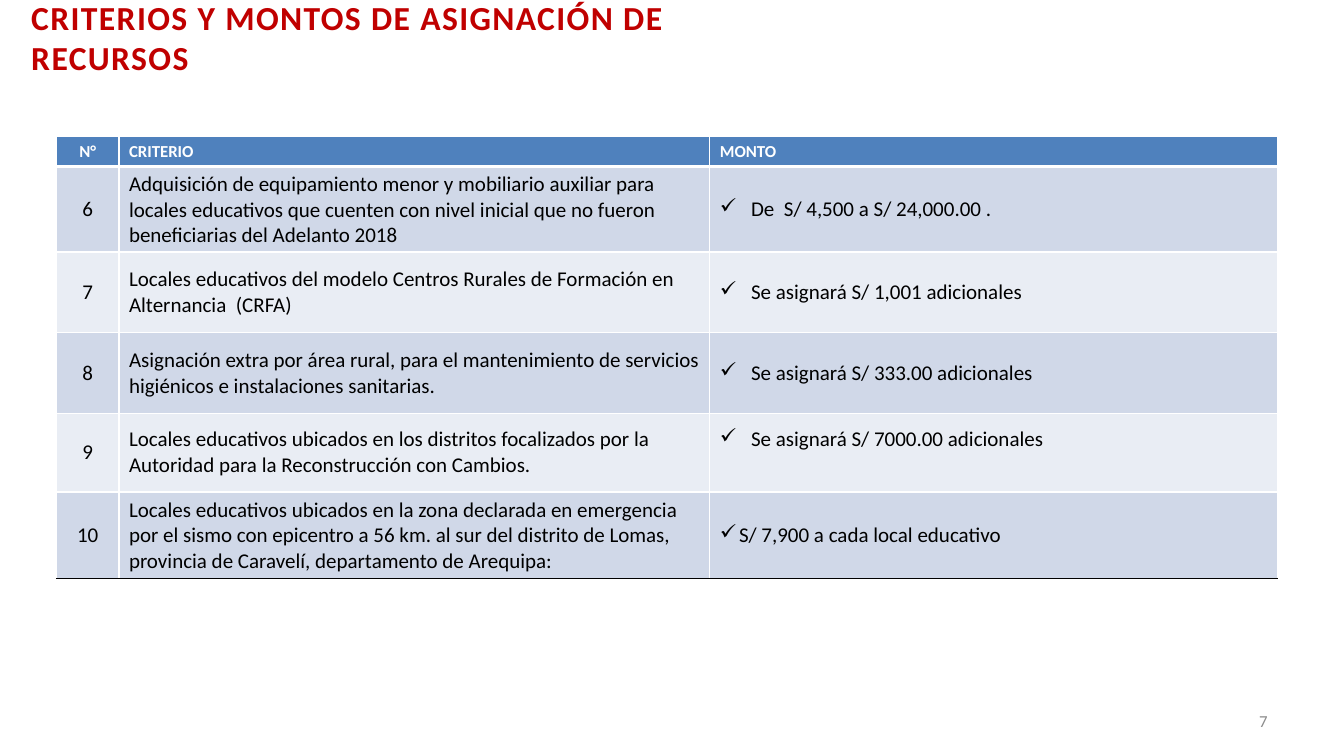
from dataclasses import dataclass

from lxml import etree
from pptx import Presentation
from pptx.dml.color import RGBColor
from pptx.enum.text import MSO_ANCHOR, MSO_AUTO_SIZE, PP_ALIGN
from pptx.oxml.ns import qn
from pptx.util import Pt

EMU_PER_PX = 9144
TITLE_ONLY = 5
LEFT, CENTER, RIGHT = PP_ALIGN.LEFT, PP_ALIGN.CENTER, PP_ALIGN.RIGHT
TOP, MIDDLE = MSO_ANCHOR.TOP, MSO_ANCHOR.MIDDLE
NO_FIT = MSO_AUTO_SIZE.NONE


@dataclass(frozen=True)
class Theme:
    """Colours, font and type sizes of the slide."""
    font: str = "Calibri"
    title: str = "C00000"
    header: str = "4F81BD"
    bands: tuple = ("D0D8E8", "E9EDF4")
    white: str = "FFFFFF"
    black: str = "000000"
    grey: str = "8C8C8C"
    title_size: int = 24
    body_size: int = 15
    small_size: int = 12


THEME = Theme()
COLUMN_WIDTHS = (62, 586, 563)
ROW_HEIGHTS = (28, 80, 80, 80, 78, 86)
HEADERS = ("N°", "CRITERIO", "MONTO")
FIRST_NUMBER = 6
CHECK_INDENT = 31
CRITERIA = (
    ("Adquisición de equipamiento menor y mobiliario auxiliar para locales "
     "educativos que cuenten con nivel inicial que no fueron beneficiarias "
     "del Adelanto 2018", "De  S/ 4,500 a S/ 24,000.00 ."),
    ("Locales educativos del modelo Centros Rurales de Formación en "
     "Alternancia  (CRFA)", "Se asignará S/ 1,001 adicionales"),
    ("Asignación extra por área rural, para el mantenimiento de servicios "
     "higiénicos e instalaciones sanitarias.", "Se asignará S/ 333.00 adicionales"),
    ("Locales educativos ubicados en los distritos focalizados por la "
     "Autoridad para la Reconstrucción con Cambios.",
     "Se asignará S/ 7000.00 adicionales"),
    ("Locales educativos ubicados en la zona declarada en emergencia por el "
     "sismo con epicentro a 56 km. al sur del distrito de Lomas, provincia de "
     "Caravelí, departamento de Arequipa:", "S/ 7,900 a cada local educativo"),
)


def px(length):
    """Turn pixels into EMU."""
    return length * EMU_PER_PX


def place(shape, left, top, width, height):
    """Move and size a shape."""
    shape.left, shape.top = px(left), px(top)
    shape.width, shape.height = px(width), px(height)


def write(frame, text, size, color, align=LEFT, bold=False):
    """Write one formatted paragraph and return it."""
    para = frame.paragraphs[0]
    para.text = text
    para.alignment = align
    font = para.font
    font.name, font.size, font.bold = THEME.font, Pt(size), bold
    font.color.rgb = RGBColor.from_string(color)
    return para


def add_check(para, indent):
    """Give a paragraph a check mark with a hanging indent."""
    properties = para._p.get_or_add_pPr()
    properties.set("marL", str(px(indent)))
    properties.set("indent", str(-px(indent)))
    etree.SubElement(properties, qn("a:buChar")).set("char", "✓")


def set_borders(cell, bottom_color, bottom_width):
    """Draw thin white cell borders with a chosen bottom line."""
    properties = cell._tc.get_or_add_tcPr()
    for side in ("L", "R", "T", "B"):
        color, width = (bottom_color, bottom_width) if side == "B" else (THEME.white, 1)
        line = etree.SubElement(properties, qn(f"a:ln{side}"), w=str(Pt(width)))
        fill = etree.SubElement(line, qn("a:solidFill"))
        etree.SubElement(fill, qn("a:srgbClr")).set("val", color)


def format_cell(cell, fill, anchor, bottom_color, bottom_width):
    """Set the borders, fill and anchor of a cell."""
    set_borders(cell, bottom_color, bottom_width)
    cell.fill.solid()
    cell.fill.fore_color.rgb = RGBColor.from_string(fill)
    cell.vertical_anchor = anchor


def add_title(slide, text):
    """Fill the title placeholder."""
    title = slide.shapes.title
    place(title, 21, 25, 767, 24)
    frame = title.text_frame
    frame.word_wrap, frame.auto_size = True, NO_FIT
    frame.vertical_anchor = MIDDLE
    para = write(frame, text, THEME.title_size, THEME.title, bold=True)
    para.runs[0]._r.get_or_add_rPr().set("spc", "100")


def add_page_number(slide, text):
    """Add the page number at the lower right."""
    box = slide.shapes.add_textbox(px(956), px(695), px(311), px(40))
    box.text_frame.word_wrap = True
    box.text_frame.vertical_anchor = MIDDLE
    write(box.text_frame, text, THEME.small_size, THEME.grey, RIGHT)


def add_criteria_table(slide):
    """Add the table of criteria and amounts."""
    table = slide.shapes.add_table(
        len(ROW_HEIGHTS), len(COLUMN_WIDTHS), px(56), px(135),
        px(sum(COLUMN_WIDTHS)), px(sum(ROW_HEIGHTS))).table
    for column, width in zip(table.columns, COLUMN_WIDTHS):
        column.width = px(width)
    for row, height in zip(table.rows, ROW_HEIGHTS):
        row.height = px(height)
    aligns = (CENTER, LEFT, LEFT)
    for cell, text, align in zip(table.rows[0].cells, HEADERS, aligns):
        format_cell(cell, THEME.header, TOP, THEME.white, 3)
        write(cell.text_frame, text, THEME.small_size, THEME.white, align, True)
    for index, (criterion, amount) in enumerate(CRITERIA):
        is_last = index == len(CRITERIA) - 1
        bottom_color = THEME.black if is_last else THEME.white
        cells = table.rows[index + 1].cells
        add_check(cells[2].text_frame.paragraphs[0], 19 if is_last else CHECK_INDENT)
        texts = (str(FIRST_NUMBER + index), criterion, amount)
        for cell, text, align in zip(cells, texts, aligns):
            format_cell(cell, THEME.bands[index % 2], MIDDLE, bottom_color, 1)
            write(cell.text_frame, text, THEME.body_size, THEME.black, align)
    table.cell(4, 2).margin_bottom = px(31)


def main():
    """Build and save the deck."""
    deck = Presentation()
    deck.slide_width, deck.slide_height = px(1333), px(750)
    slide = deck.slides.add_slide(deck.slide_layouts[TITLE_ONLY])
    add_page_number(slide, "7")
    add_criteria_table(slide)
    add_title(slide, "CRITERIOS Y MONTOS DE ASIGNACIÓN DE RECURSOS")
    deck.save("out.pptx")


if __name__ == "__main__":
    main()
